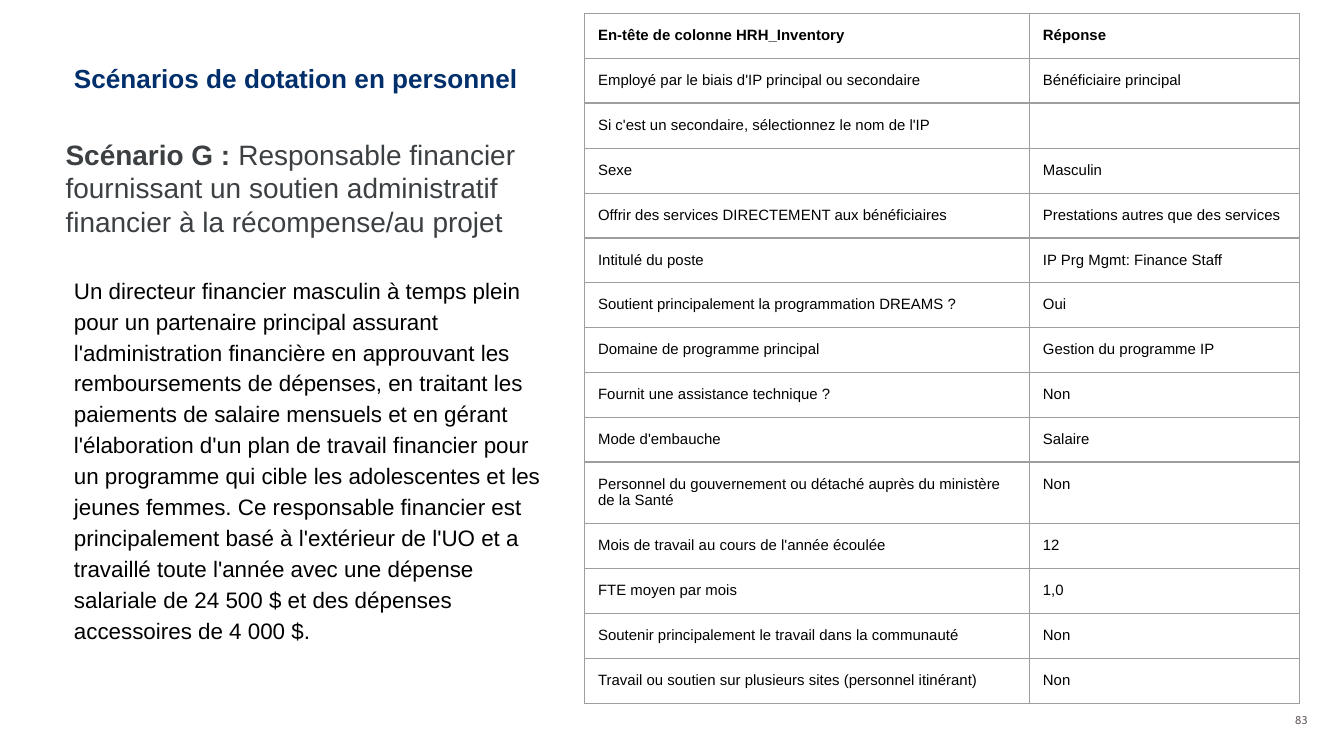
from dataclasses import dataclass

from lxml import etree
from pptx import Presentation
from pptx.dml.color import RGBColor
from pptx.enum.text import MSO_ANCHOR, MSO_AUTO_SIZE, PP_ALIGN
from pptx.oxml.ns import qn
from pptx.util import Inches, Pt

LEFT, RIGHT = PP_ALIGN.LEFT, PP_ALIGN.RIGHT
TOP, MIDDLE, BOTTOM = MSO_ANCHOR.TOP, MSO_ANCHOR.MIDDLE, MSO_ANCHOR.BOTTOM
NO_AUTOFIT = MSO_AUTO_SIZE.NONE
TITLE_AND_CONTENT = 1


@dataclass(frozen=True)
class Theme:
    font: str = "Arial"
    number_font: str = "Cabin"
    navy: str = "002F6C"
    charcoal: str = "3C4043"
    black: str = "000000"
    gray: str = "6C6463"
    border: str = "9E9E9E"
    border_width: float = 0.75
    title_size: int = 14
    scenario_size: int = 15
    body_size: int = 12
    table_size: int = 8
    number_size: int = 6
    inset: float = 0.1


class SlideBuilder:
    def __init__(self, slide, theme):
        self.slide = slide
        self.theme = theme

    def style_run(self, run, size, color, bold=False, font=None):
        run.font.name = font or self.theme.font
        run.font.size = Pt(size)
        run.font.bold = bold
        run.font.color.rgb = RGBColor.from_string(color)

    def set_frame(self, frame, anchor, vertical_inset=None):
        frame.word_wrap = True
        frame.auto_size = NO_AUTOFIT
        frame.vertical_anchor = anchor
        frame.margin_left = frame.margin_right = Inches(self.theme.inset)
        frame.margin_top = frame.margin_bottom = Inches(vertical_inset or self.theme.inset)

    def place(self, shape, box):
        shape.left, shape.top, shape.width, shape.height = map(Inches, box)

    def title(self, text, box):
        heading = self.slide.shapes.title
        self.place(heading, box)
        self.set_frame(heading.text_frame, BOTTOM)
        heading.text_frame.text = text
        paragraph = heading.text_frame.paragraphs[0]
        paragraph.alignment = LEFT
        self.style_run(paragraph.runs[0], self.theme.title_size, self.theme.navy, bold=True)

    def body(self, text, box):
        description = self.slide.placeholders[1]
        self.place(description, box)
        self.set_frame(description.text_frame, TOP)
        description.text_frame.text = text
        paragraph = description.text_frame.paragraphs[0]
        paragraph.line_spacing = 1.15
        paragraph.space_before = paragraph.space_after = Pt(12)
        properties = paragraph._p.get_or_add_pPr()
        properties.set("marL", "0")
        properties.set("indent", "0")
        etree.SubElement(properties, qn("a:buNone"))
        self.style_run(paragraph.runs[0], self.theme.body_size, self.theme.black)

    def scenario(self, label, summary, box):
        frame = self.slide.shapes.add_textbox(*map(Inches, box)).text_frame
        self.set_frame(frame, TOP)
        for text, bold in ((label, True), (summary, False)):
            run = frame.paragraphs[0].add_run()
            run.text = text
            self.style_run(run, self.theme.scenario_size, self.theme.charcoal, bold)

    def page_number(self, text, box):
        frame = self.slide.shapes.add_textbox(*map(Inches, box)).text_frame
        self.set_frame(frame, MIDDLE, vertical_inset=0.05)
        frame.text = text
        paragraph = frame.paragraphs[0]
        paragraph.alignment = RIGHT
        self.style_run(paragraph.runs[0], self.theme.number_size, self.theme.gray,
                       font=self.theme.number_font)

    def cell_borders(self, cell):
        properties = cell._tc.get_or_add_tcPr()
        for side in ("a:lnL", "a:lnR", "a:lnT", "a:lnB"):
            line = etree.SubElement(properties, qn(side), w=str(Pt(self.theme.border_width)))
            fill = etree.SubElement(line, qn("a:solidFill"))
            etree.SubElement(fill, qn("a:srgbClr"), val=self.theme.border)

    def fill_cell(self, cell, text, bold):
        self.cell_borders(cell)
        cell.fill.background()
        cell.margin_left = cell.margin_right = Inches(self.theme.inset)
        cell.margin_top = cell.margin_bottom = Inches(self.theme.inset)
        cell.vertical_anchor = TOP
        cell.text_frame.text = text
        paragraph = cell.text_frame.paragraphs[0]
        for run in paragraph.runs:
            self.style_run(run, self.theme.table_size, self.theme.black, bold)
        if not text:  # keeps an empty cell from stretching its row
            etree.SubElement(paragraph._p, qn("a:endParaRPr"),
                             sz=str(self.theme.table_size * 100))

    def table(self, rows, left, top, widths, heights):
        grid = self.slide.shapes.add_table(
            len(rows), len(widths), Inches(left), Inches(top),
            Inches(sum(widths)), Inches(sum(heights))).table
        grid.first_row = grid.horz_banding = False
        for column, width in zip(grid.columns, widths):
            column.width = Inches(width)
        for index, (values, height) in enumerate(zip(rows, heights)):
            grid.rows[index].height = Inches(height)
            for column, value in enumerate(values):
                self.fill_cell(grid.cell(index, column), value, bold=index == 0)


INVENTORY = [
    ("En-tête de colonne HRH_Inventory", "Réponse"),
    ("Employé par le biais d'IP principal ou secondaire", "Bénéficiaire principal"),
    ("Si c'est un secondaire, sélectionnez le nom de l'IP", ""),
    ("Sexe", "Masculin"),
    ("Offrir des services DIRECTEMENT aux bénéficiaires", "Prestations autres que des services"),
    ("Intitulé du poste", "IP Prg Mgmt: Finance Staff"),
    ("Soutient principalement la programmation DREAMS ?", "Oui"),
    ("Domaine de programme principal", "Gestion du programme IP"),
    ("Fournit une assistance technique ?", "Non"),
    ("Mode d'embauche", "Salaire"),
    ("Personnel du gouvernement ou détaché auprès du ministère de la Santé", "Non"),
    ("Mois de travail au cours de l'année écoulée", "12"),
    ("FTE moyen par mois", "1,0"),
    ("Soutenir principalement le travail dans la communauté", "Non"),
    ("Travail ou soutien sur plusieurs sites (personnel itinérant)", "Non"),
]
TABLE_HEIGHT = 5.13
TWO_LINE_ROW, TWO_LINE_HEIGHT = 10, 0.46
DESCRIPTION = (
    "Un directeur financier masculin à temps plein pour un partenaire principal assurant "
    "l'administration financière en approuvant les remboursements de dépenses, en traitant "
    "les paiements de salaire mensuels et en gérant l'élaboration d'un plan de travail "
    "financier pour un programme qui cible les adolescentes et les jeunes femmes. "
    "Ce responsable financier est principalement basé à l'extérieur de l'UO et a travaillé "
    "toute l'année avec une dépense salariale de 24 500 $ et des dépenses accessoires "
    "de 4 000 $."
)


def main():
    deck = Presentation()
    deck.slide_width = Inches(10)
    deck.slide_height = deck.slide_width * 9 // 16
    slide = deck.slides.add_slide(deck.slide_layouts[TITLE_AND_CONTENT])
    builder = SlideBuilder(slide, Theme())

    builder.title("Scénarios de dotation en personnel", (0.45, 0.3, 8.5, 0.5))
    builder.scenario(
        "Scénario G : ",
        "Responsable financier fournissant un soutien administratif financier "
        "à la récompense/au projet",
        (0.39, 0.92, 3.96, 0.96))
    heights = [(TABLE_HEIGHT - TWO_LINE_HEIGHT) / (len(INVENTORY) - 1)] * len(INVENTORY)
    heights[TWO_LINE_ROW] = TWO_LINE_HEIGHT
    builder.table(INVENTORY, 4.35, 0.1, (3.31, 2.01), heights)
    builder.page_number("83", (7.5, 5.26, 2.33, 0.2))
    builder.body(DESCRIPTION, (0.45, 1.93, 3.71, 3.33))

    deck.save("out.pptx")


if __name__ == "__main__":
    main()
